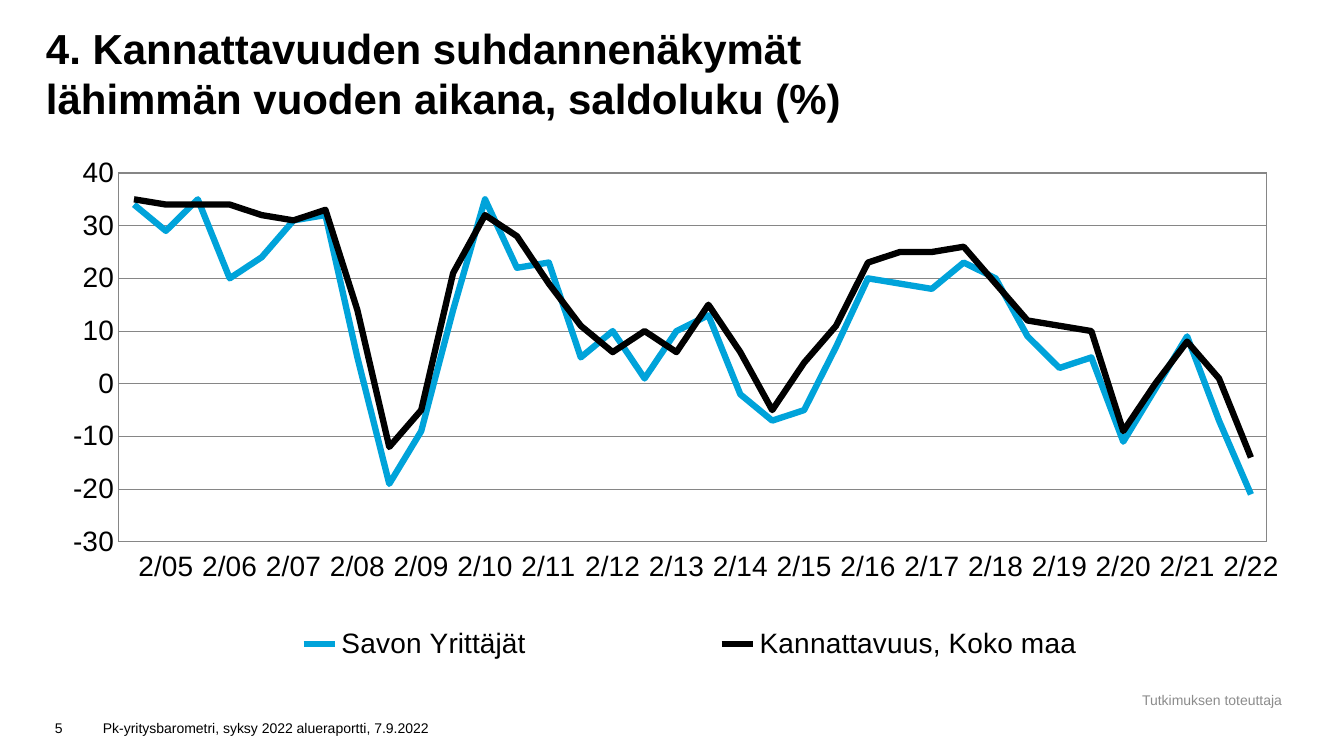
from lxml.etree import SubElement
from pptx import Presentation
from pptx.chart.data import CategoryChartData
from pptx.dml.color import RGBColor
from pptx.enum.chart import XL_CHART_TYPE, XL_LEGEND_POSITION, XL_TICK_LABEL_POSITION, XL_TICK_MARK
from pptx.enum.text import MSO_ANCHOR, PP_ALIGN
from pptx.oxml import parse_xml
from pptx.oxml.ns import nsdecls, qn
from pptx.util import Emu, Pt

BLACK = RGBColor(0x00, 0x00, 0x00)
BLUE = RGBColor(0x00, 0xA3, 0xDA)
GREY = RGBColor(0x8C, 0x8C, 0x8C)
GRID = RGBColor(0x86, 0x86, 0x86)
FONT = "Arial"

TITLE = ["4. Kannattavuuden suhdannenäkymät", "lähimmän vuoden aikana, saldoluku (%)"]
TITLE_BOX = (46, 0, 1240, 123)

# text, box, colour, alignment, anchor
SMALL_TEXTS = [
    ("Tutkimuksen toteuttaja", (1125, 687, 174, 26), GREY, PP_ALIGN.CENTER, MSO_ANCHOR.MIDDLE),
    ("Pk-yritysbarometri, syksy 2022 alueraportti, 7.9.2022", (93, 706, 420, 35),
     BLACK, PP_ALIGN.LEFT, MSO_ANCHOR.BOTTOM),
    ("5", (45, 706, 47, 35), BLACK, PP_ALIGN.LEFT, MSO_ANCHOR.BOTTOM),
]

CHART_BOX = (45, 156, 1240, 516)
PLOT_BOX = (118, 173, 1149, 369)
LEGEND_BOX = (117, 618, 1146, 52)
YEARS = range(5, 23)
SERIES = [
    ("Savon Yrittäjät", BLUE,
     [34, 29, 35, 20, 24, 31, 32, 5, -19, -9, 14, 35, 22, 23, 5, 10, 1, 10,
      13, -2, -7, -5, 7, 20, 19, 18, 23, 20, 9, 3, 5, -11, -1, 9, -7, -21]),
    ("Kannattavuus, Koko maa", BLACK,
     [35, 34, 34, 34, 32, 31, 33, 14, -12, -5, 21, 32, 28, 19, 11, 6, 10, 6,
      15, 6, -5, 4, 11, 23, 25, 25, 26, 19, 12, 11, 10, -9, 0, 8, 1, -14]),
]


def px(length):
    return Emu(round(length * 914400 / 100.8))


def add_text(slide, lines, box, size, color, align, anchor, bold=False, inset=None):
    frame = slide.shapes.add_textbox(*map(px, box)).text_frame
    frame.word_wrap = True
    frame.vertical_anchor = anchor
    if inset is not None:
        frame.margin_left = frame.margin_right = inset
        frame.margin_top = frame.margin_bottom = inset
    paragraph = frame.paragraphs[0]
    paragraph.alignment = align
    for index, line in enumerate(lines):
        if index:
            paragraph.add_line_break()
        run = paragraph.add_run()
        run.text = line
        run.font.name = FONT
        run.font.size = Pt(size)
        run.font.bold = bold
        run.font.color.rgb = color


def layout_xml(box, inner=False):
    """Manual layout of a chart part, as fractions of the chart box."""
    left, top, width, height = CHART_BOX
    fractions = {
        "x": (box[0] - left) / width, "y": (box[1] - top) / height,
        "w": box[2] / width, "h": box[3] / height,
    }
    target = '<c:layoutTarget val="inner"/>' if inner else ""
    modes = '<c:xMode val="edge"/><c:yMode val="edge"/>'
    sizes = "".join(f'<c:{key} val="{value:.4f}"/>' for key, value in fractions.items())
    return parse_xml(f'<c:layout {nsdecls("c")}><c:manualLayout>{target}{modes}{sizes}'
                     '</c:manualLayout></c:layout>')


def style_axes(chart):
    for axis in (chart.category_axis, chart.value_axis):
        axis.major_tick_mark = axis.minor_tick_mark = XL_TICK_MARK.NONE
        axis.format.line.color.rgb = GRID
        axis.format.line.width = Pt(0.75)
    category_axis, value_axis = chart.category_axis, chart.value_axis
    category_axis.tick_label_position = XL_TICK_LABEL_POSITION.LOW
    label_skip = SubElement(category_axis._element, qn("c:tickLblSkip"))
    label_skip.set("val", "1")
    category_axis._element.find(qn("c:noMultiLvlLbl")).addprevious(label_skip)
    value_axis.minimum_scale, value_axis.maximum_scale, value_axis.major_unit = -30, 40, 10
    value_axis.has_major_gridlines = True
    value_axis.major_gridlines.format.line.color.rgb = GRID
    value_axis.major_gridlines.format.line.width = Pt(0.75)


def add_balance_chart(slide):
    data = CategoryChartData(number_format="0")
    data.categories = [label for year in YEARS for label in ("", f"2/{year:02}")]
    for name, _, values in SERIES:
        data.add_series(name, values)
    chart = slide.shapes.add_chart(XL_CHART_TYPE.LINE, *map(px, CHART_BOX), data).chart
    chart.has_title = False
    chart.font.name = FONT
    chart.font.size = Pt(20)
    chart.font.color.rgb = BLACK
    style_axes(chart)

    plot = chart.plots[0]
    plot.vary_by_categories = False
    for series, (_, color, _) in zip(plot.series, SERIES):
        series.smooth = False
        series.format.line.color.rgb = color
        series.format.line.width = Pt(4.5)

    plot_area = chart._chartSpace.chart.plotArea
    for layout in plot_area.findall(qn("c:layout")):
        plot_area.remove(layout)
    plot_area.insert(0, layout_xml(PLOT_BOX, inner=True))
    plot_area.append(parse_xml(
        f'<c:spPr {nsdecls("c", "a")}><a:noFill/><a:ln w="9525"><a:solidFill>'
        f'<a:srgbClr val="{GRID}"/></a:solidFill></a:ln></c:spPr>'))

    chart.has_legend = True
    legend = chart.legend
    legend.position = XL_LEGEND_POSITION.RIGHT
    legend.include_in_layout = False
    legend.font.size = Pt(20)
    for layout in legend._element.findall(qn("c:layout")):
        legend._element.remove(layout)
    legend._element.find(qn("c:legendPos")).addnext(layout_xml(LEGEND_BOX))


def main():
    presentation = Presentation()
    presentation.slide_width, presentation.slide_height = px(1344), px(756)
    slide = presentation.slides.add_slide(presentation.slide_layouts[6])
    for text, box, color, align, anchor in SMALL_TEXTS:
        add_text(slide, [text], box, 10, color, align, anchor)
    add_text(slide, TITLE, TITLE_BOX, 30, BLACK, PP_ALIGN.LEFT, MSO_ANCHOR.BOTTOM,
             bold=True, inset=0)
    add_balance_chart(slide)
    presentation.save("out.pptx")


if __name__ == "__main__":
    main()
